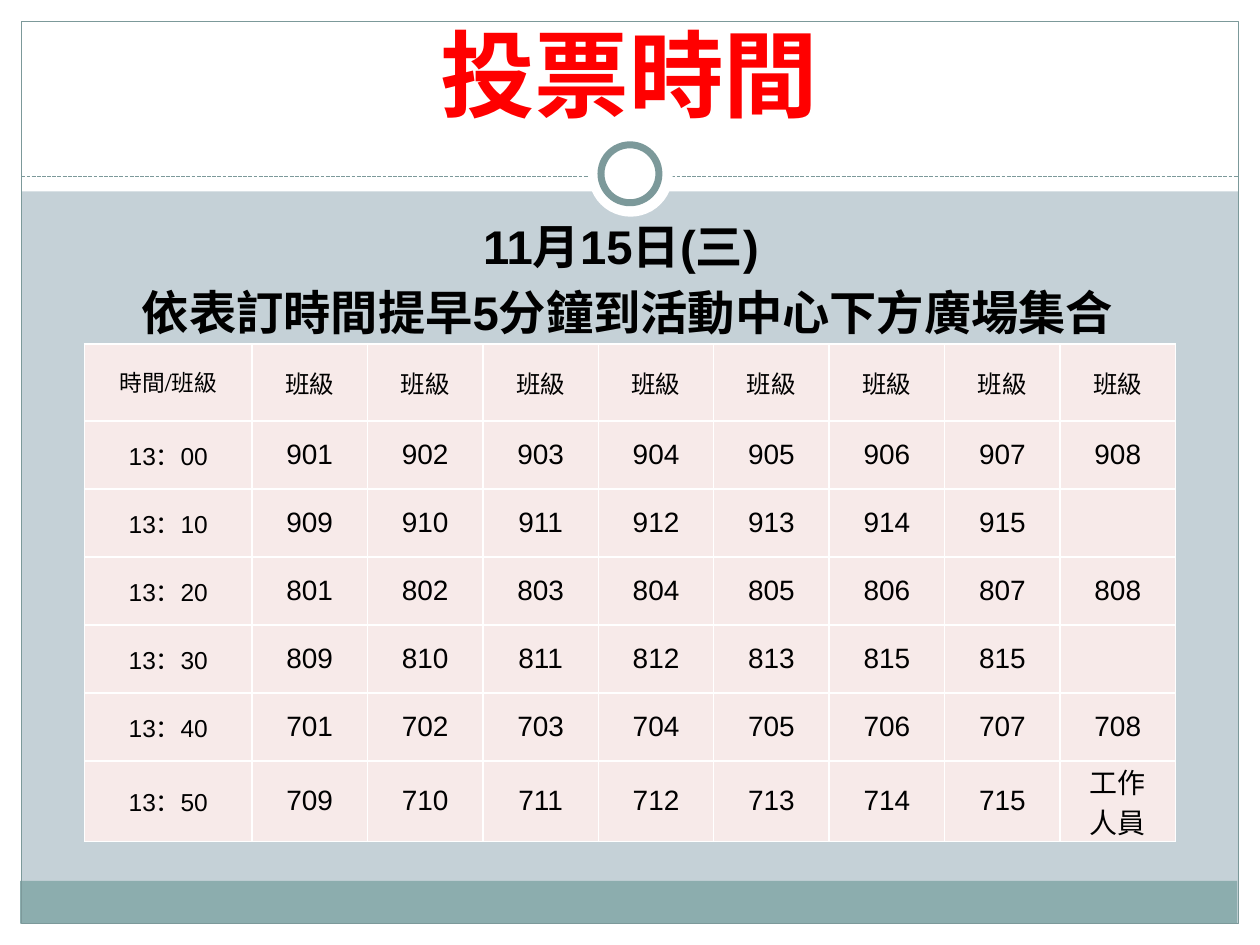
from dataclasses import dataclass

from pptx import Presentation
from pptx.dml.color import RGBColor
from pptx.enum.dml import MSO_LINE
from pptx.enum.shapes import MSO_CONNECTOR, MSO_SHAPE
from pptx.enum.text import MSO_ANCHOR, MSO_AUTO_SIZE, PP_ALIGN
from pptx.oxml import parse_xml
from pptx.oxml.ns import nsdecls
from pptx.oxml.xmlchemy import OxmlElement
from pptx.util import Inches, Pt

MIST = RGBColor(0xC5, 0xD1, 0xD7)
WHITE = RGBColor(0xFF, 0xFF, 0xFF)
TEAL = RGBColor(0x8C, 0xAD, 0xAE)
SLATE = RGBColor(0x7C, 0x99, 0x9A)
RED = RGBColor(0xFF, 0x00, 0x00)
BLACK = RGBColor(0x00, 0x00, 0x00)
BLUSH = RGBColor(0xF7, 0xEA, 0xE9)

SERIF = "TeX Gyre Schola"
SANS = "Arial"

ANNOUNCEMENT = ["11月15日(三) ", "依表訂時間提早5分鐘到活動中心下方廣場集合"]
SCHEDULE = [
    ["時間/班級"] + ["班級"] * 8,
    ["13：00", "901", "902", "903", "904", "905", "906", "907", "908"],
    ["13：10", "909", "910", "911", "912", "913", "914", "915", ""],
    ["13：20", "801", "802", "803", "804", "805", "806", "807", "808"],
    ["13：30", "809", "810", "811", "812", "813", "815", "815", ""],
    ["13：40", "701", "702", "703", "704", "705", "706", "707", "708"],
    ["13：50", "709", "710", "711", "712", "713", "714", "715", "工作\n人員"],
]


@dataclass
class Box:
    left: int
    top: int
    width: int
    height: int

    def share(self, x, y, width, height):
        """Return the inner box whose sides are percentages of this one."""
        return Box(
            int(self.left + self.width * x / 100),
            int(self.top + self.height * y / 100),
            int(self.width * width / 100),
            int(self.height * height / 100),
        )

    def bounds(self):
        return self.left, self.top, self.width, self.height


def add_panel(slide, kind, box, fill=None, line_width=None):
    panel = slide.shapes.add_shape(kind, *box.bounds())
    panel.shadow.inherit = False
    if fill is None:
        panel.fill.background()
    else:
        panel.fill.solid()
        panel.fill.fore_color.rgb = fill
    if line_width is None:
        panel.line.fill.background()
    else:
        panel.line.color.rgb = SLATE
        panel.line.width = Pt(line_width)


def add_divider(slide, box):
    divider = slide.shapes.add_connector(
        MSO_CONNECTOR.STRAIGHT, box.left, box.top, box.left + box.width, box.top
    )
    divider.line.color.rgb = SLATE
    divider.line.width = Pt(0.75)
    divider.line.dash_style = MSO_LINE.SQUARE_DOT
    divider.element.spPr.append(OxmlElement("a:effectLst"))


def add_backdrop(slide, page):
    """Draw the white margins, footer bar, frame, divider and ring."""
    margins = [
        (0, 97.73, 100, 2.27),
        (0, 0, 100, 20.27),
        (0, 0, 1.7, 100),
        (98.3, 0, 1.7, 100),
    ]
    for margin in margins:
        add_panel(slide, MSO_SHAPE.RECTANGLE, page.share(*margin), WHITE)
    add_panel(slide, MSO_SHAPE.RECTANGLE, page.share(1.6, 93.2, 96.6, 4.53), TEAL)
    frame = page.share(1.7, 2.27, 96.6, 95.46)
    add_panel(slide, MSO_SHAPE.RECTANGLE, frame, line_width=0.75)
    add_divider(slide, page.share(1.7, 18.67, 96.6, 0))
    add_panel(slide, MSO_SHAPE.OVAL, page.share(46.7, 14, 6.7, 8.93), WHITE)
    add_panel(slide, MSO_SHAPE.OVAL, page.share(47.7, 15.33, 4.6, 6.13), WHITE, 4)


def add_text(paragraph, wording, size, font_name, color, bold=False):
    paragraph.alignment = PP_ALIGN.CENTER
    run = paragraph.add_run()
    run.text = wording
    run.font.size = Pt(size)
    run.font.name = font_name
    run.font.color.rgb = color
    run.font.bold = bold


def place_placeholder(slide, placeholder, box, anchor):
    """Position a placeholder and bring it in front of the backdrop."""
    placeholder.left, placeholder.top, placeholder.width, placeholder.height = box.bounds()
    slide.shapes.element.append(placeholder.element)
    frame = placeholder.text_frame
    frame.word_wrap = True
    frame.auto_size = MSO_AUTO_SIZE.NONE
    frame.vertical_anchor = anchor
    return frame


def fill_title(slide, box):
    frame = place_placeholder(slide, slide.shapes.title, box, MSO_ANCHOR.BOTTOM)
    add_text(frame.paragraphs[0], "投票時間", 54, SERIF, RED, bold=True)


def fill_announcement(slide, box):
    frame = place_placeholder(slide, slide.placeholders[1], box, MSO_ANCHOR.TOP)
    for index, wording in enumerate(ANNOUNCEMENT):
        paragraph = frame.paragraphs[0] if index == 0 else frame.add_paragraph()
        add_text(paragraph, wording, 27, SANS, BLACK, bold=True)
        properties = paragraph._p.get_or_add_pPr()
        properties.set("marL", "0")
        properties.set("indent", "0")
        properties.append(OxmlElement("a:buNone"))


def style_cell(cell):
    cell.vertical_anchor = MSO_ANCHOR.MIDDLE
    cell.margin_left = cell.margin_right = Inches(0.02)
    cell.margin_top = cell.margin_bottom = 0
    for side in ("lnL", "lnR", "lnT", "lnB"):
        border = parse_xml(
            f'<a:{side} {nsdecls("a")} w="{Pt(1)}"><a:solidFill>'
            f'<a:srgbClr val="{WHITE}"/></a:solidFill></a:{side}>'
        )
        cell._tc.get_or_add_tcPr().append(border)
    cell.fill.solid()
    cell.fill.fore_color.rgb = BLUSH


def text_size(row, column):
    if row == 0:
        return 13 if column == 0 else 14
    return 14 if column == 0 else 16


def add_schedule(slide, box):
    row_count, column_count = len(SCHEDULE), len(SCHEDULE[0])
    table = slide.shapes.add_table(row_count, column_count, *box.bounds()).table
    time_width = Inches(1.33)
    class_width = (box.width - time_width) // (column_count - 1)
    header_height = Inches(0.61)
    class_height = (box.height - header_height) // (row_count - 1)
    for index, column in enumerate(table.columns):
        column.width = time_width if index == 0 else class_width
    for index, row in enumerate(table.rows):
        row.height = header_height if index == 0 else class_height
    for row, entries in enumerate(SCHEDULE):
        for column, entry in enumerate(entries):
            cell = table.cell(row, column)
            style_cell(cell)
            if not entry:
                continue
            for index, wording in enumerate(entry.split("\n")):
                frame = cell.text_frame
                paragraph = frame.paragraphs[0] if index == 0 else frame.add_paragraph()
                font_name = SERIF if row == 0 else SANS
                add_text(paragraph, wording, text_size(row, column), font_name, BLACK)


def main():
    presentation = Presentation()
    presentation.slide_width = Inches(10)
    presentation.slide_height = Inches(7.5)
    page = Box(0, 0, presentation.slide_width, presentation.slide_height)
    slide = presentation.slides.add_slide(presentation.slide_layouts[1])
    slide.background.fill.solid()
    slide.background.fill.fore_color.rgb = MIST
    add_backdrop(slide, page)
    fill_title(slide, page.share(3.3, 3.33, 93.3, 11.07))
    fill_announcement(slide, page.share(3.3, 22.27, 93, 66.67))
    add_schedule(slide, page.share(6.7, 36.4, 86.6, 51.33))
    presentation.save("out.pptx")


if __name__ == "__main__":
    main()
